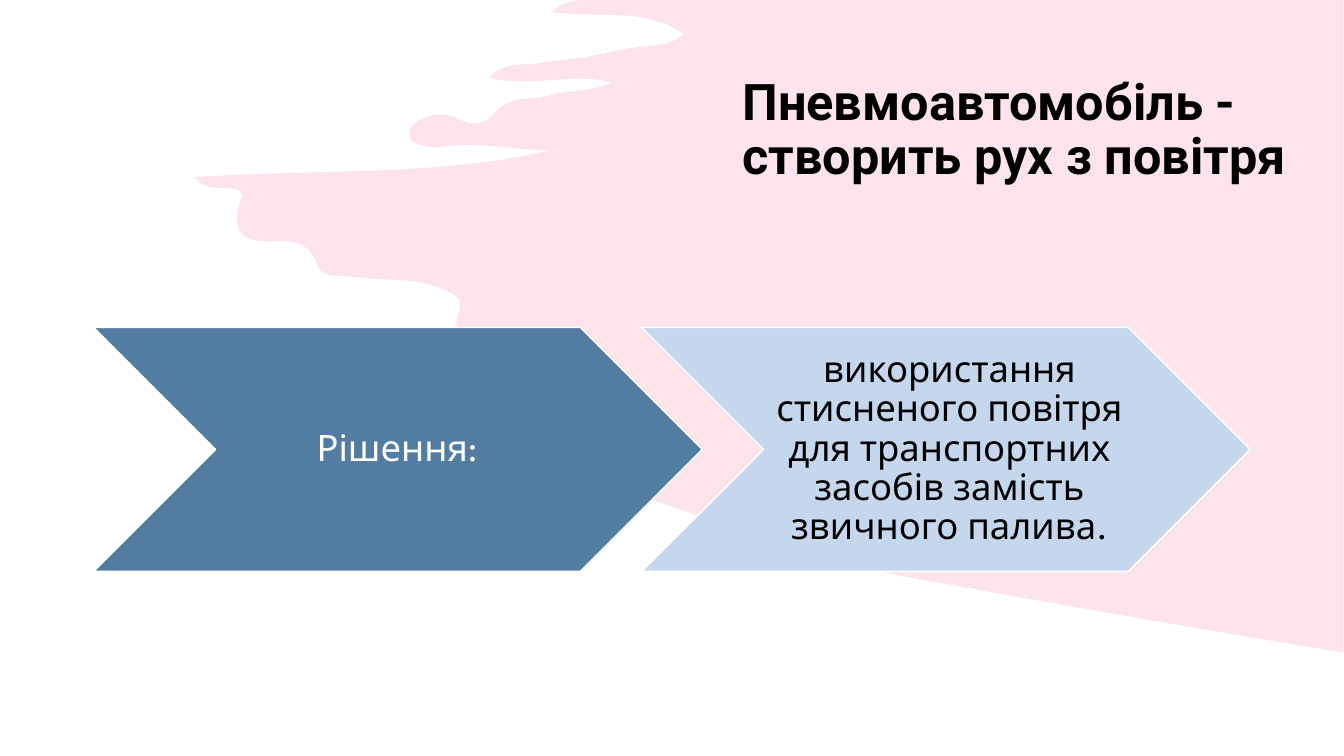
from dataclasses import dataclass

from lxml.etree import Element, SubElement
from pptx import Presentation
from pptx.dml.color import RGBColor
from pptx.enum.shapes import MSO_SHAPE
from pptx.enum.text import MSO_ANCHOR, PP_ALIGN
from pptx.oxml.ns import qn
from pptx.shapes.autoshape import Shape
from pptx.slide import Slide
from pptx.text.text import TextFrame
from pptx.util import Cm, Pt


@dataclass(frozen=True)
class Theme:
    white: str = "FFFFFF"
    black: str = "000000"
    pink: str = "F07C98"
    blue: str = "537CA2"
    pale_blue: str = "C5D7ED"
    title_font: str = "Roboto"
    body_font: str = "League Spartan"
    title_size: int = 36
    body_size: int = 26


@dataclass(frozen=True)
class Step:
    text: str
    fill: str
    color: str


THEME = Theme()
STEPS = [
    Step("Рішення: ", THEME.blue, THEME.white),
    Step("використання стисненого повітря для транспортних засобів "
         "замість звичного палива.", THEME.pale_blue, THEME.black),
]

# Chevron row, in cm
STEP_LEFT, STEP_TOP, STEP_PITCH = 2.36, 8.25, 13.81
STEP_WIDTH, STEP_HEIGHT = 15.34, 6.15

# Brush stroke in units of 0.0254 cm: each row is a Bezier segment
# (two control points, then the end point)
BRUSH_UNIT = Cm(0.0254)
BRUSH_START = (575, 0)
BRUSH_CURVES = [
    (567, 1, 557, 3, 548, 12),
    (595, 19, 639, 6, 678, 34),
    (664, 47, 648, 44, 632, 47),
    (616, 49, 600, 53, 584, 56),
    (567, 59, 549, 60, 532, 63),
    (518, 65, 502, 61, 485, 77),
    (527, 88, 566, 71, 608, 82),
    (584, 92, 563, 89, 544, 95),
    (527, 100, 506, 94, 492, 111),
    (481, 124, 469, 126, 455, 118),
    (442, 111, 428, 113, 415, 120),
    (411, 123, 406, 126, 406, 132),
    (406, 141, 412, 143, 418, 144),
    (424, 146, 431, 147, 437, 146),
    (474, 139, 510, 150, 547, 149),
    (431, 176, 314, 167, 193, 176),
    (209, 195, 229, 179, 241, 193),
    (230, 222, 234, 237, 258, 239),
    (280, 241, 304, 231, 316, 265),
    (320, 276, 341, 273, 355, 275),
    (384, 279, 414, 275, 442, 288),
    (453, 293, 460, 297, 455, 311),
    (449, 325, 456, 330, 466, 336),
    (473, 340, 483, 339, 489, 352),
    (428, 350, 369, 340, 309, 350),
    (375, 374, 447, 373, 512, 402),
    (510, 412, 495, 407, 494, 422),
    (528, 438, 569, 427, 605, 450),
    (584, 461, 565, 444, 545, 454),
    (552, 469, 840, 561, 892, 571),
    (978, 587, 1195, 625, 1318, 645),
]
BRUSH_CORNERS = [(1333, 647), (1333, 0)]


def paint(sp: Shape, fill: str, line: str | None = None, alpha: int = 100) -> None:
    sp.shadow.inherit = False
    sp.fill.solid()
    sp.fill.fore_color.rgb = RGBColor.from_string(fill)
    if alpha < 100:
        color = sp._element.spPr.find(qn("a:solidFill"))[0]
        SubElement(color, qn("a:alpha")).set("val", str(alpha * 1000))
    if line:
        sp.line.color.rgb = RGBColor.from_string(line)
        sp.line.width = Pt(1)
    else:
        sp.line.fill.background()


def write(tf: TextFrame, text: str, *, font: str, size: int, color: str,
          bold: bool = False, align: PP_ALIGN = PP_ALIGN.LEFT) -> None:
    tf.word_wrap = True
    tf.vertical_anchor = MSO_ANCHOR.MIDDLE
    p = tf.paragraphs[0]
    p.alignment = align
    p.line_spacing = 0.9
    r = p.add_run()
    r.text = text
    r.font.name, r.font.size, r.font.bold = font, Pt(size), bold
    r.font.color.rgb = RGBColor.from_string(color)


def add_brush(slide: Slide) -> None:
    ends = [curve[4:] for curve in BRUSH_CURVES] + BRUSH_CORNERS
    builder = slide.shapes.build_freeform(*BRUSH_START, scale=float(BRUSH_UNIT))
    builder.add_line_segments(ends, close=True)
    sp = builder.convert_to_shape()
    paint(sp, THEME.pink, alpha=20)

    # Bend the straight segments, in coordinates relative to the shape
    left = min(x for x, _ in ends)
    segments = list(sp._element.iter(qn("a:lnTo")))
    for segment, (x1, y1, x2, y2, _, _) in zip(segments, BRUSH_CURVES):
        segment.tag = qn("a:cubicBezTo")
        for i, (x, y) in enumerate([(x1, y1), (x2, y2)]):
            segment.insert(i, Element(qn("a:pt"), x=str(x - left), y=str(y)))


def add_step(slide: Slide, index: int, step: Step) -> None:
    sp = slide.shapes.add_shape(
        MSO_SHAPE.CHEVRON, Cm(STEP_LEFT + index * STEP_PITCH), Cm(STEP_TOP),
        Cm(STEP_WIDTH), Cm(STEP_HEIGHT))
    paint(sp, step.fill, line=THEME.white)
    tf = sp.text_frame
    tf.margin_left = Cm(0.28)
    tf.margin_right = tf.margin_top = tf.margin_bottom = Cm(0.1)
    write(tf, step.text, font=THEME.body_font, size=THEME.body_size,
          color=step.color, align=PP_ALIGN.CENTER)


def main() -> None:
    prs = Presentation()
    prs.slide_width, prs.slide_height = Cm(33.87), Cm(19.05)
    slide = prs.slides.add_slide(prs.slide_layouts[6])

    # Background
    slide.background.fill.solid()
    slide.background.fill.fore_color.rgb = RGBColor.from_string(THEME.white)
    add_brush(slide)

    # Title
    title = slide.shapes.add_textbox(Cm(18.46), Cm(0.67), Cm(14.88), Cm(5.26))
    write(title.text_frame, "Пневмоавтомобіль - створить рух з повітря",
          font=THEME.title_font, size=THEME.title_size, color=THEME.black, bold=True)

    # Chevrons
    for index, step in enumerate(STEPS):
        add_step(slide, index, step)

    prs.save("out.pptx")


if __name__ == "__main__":
    main()
